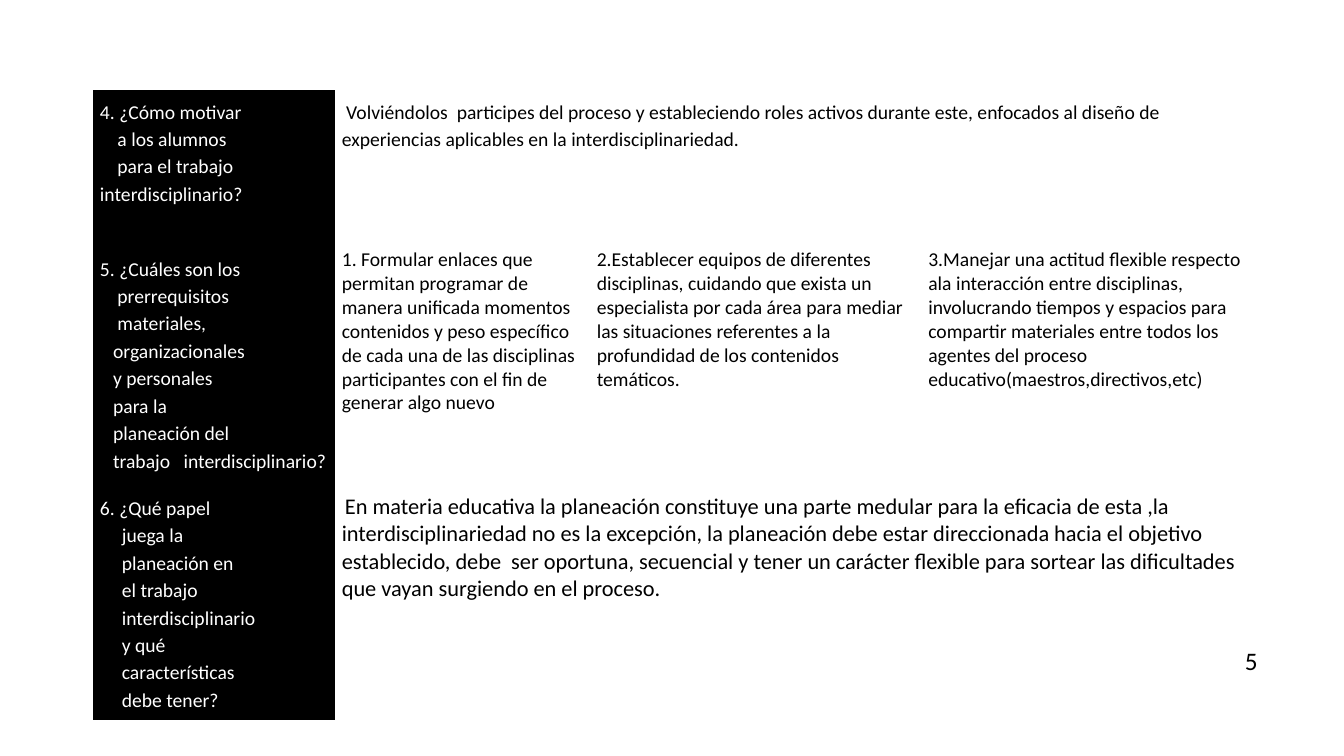
from pptx import Presentation
from pptx.dml.color import RGBColor
from pptx.enum.text import MSO_ANCHOR, MSO_AUTO_SIZE
from pptx.oxml.ns import qn
from pptx.util import Cm, Pt

MIDDLE = MSO_ANCHOR.MIDDLE
TOP = MSO_ANCHOR.TOP
FIT_SHAPE = MSO_AUTO_SIZE.SHAPE_TO_FIT_TEXT
BLACK = RGBColor(0x00, 0x00, 0x00)
WHITE = RGBColor(0xFF, 0xFF, 0xFF)
FONT = "Calibri"
PLAIN_TABLE_STYLE = "{2D5ABB26-0587-4C30-8999-92F81FD0307C}"
CELL_MARGIN = Cm(0.18)
SPACE_WIDTH = 0.11
COLUMN_SHARES = (2.4, 2.53, 3.29, 3.29)
ROW_HEIGHTS = (Cm(3.63), Cm(6.17), Cm(5.54))

QUESTIONS = [
    [(0, "4. ¿Cómo motivar"), (4, "a los alumnos"), (4, "para el trabajo"),
     (0, "interdisciplinario?")],
    [(0, "5. ¿Cuáles son los"), (4, "prerrequisitos"), (4, "materiales,"),
     (3, "organizacionales"), (3, "y personales"), (3, "para la"),
     (3, "planeación del"), (3, "trabajo   interdisciplinario?")],
    [(0, "6. ¿Qué papel"), (5, "juega la"), (5, "planeación en"),
     (5, "el trabajo"), (5, "interdisciplinario"), (5, "y qué"),
     (5, "características"), (5, "debe tener?")],
]
MOTIVATION = (
    "Volviéndolos  participes del proceso y estableciendo roles activos "
    "durante este, enfocados al diseño de experiencias aplicables en la "
    "interdisciplinariedad."
)
PREREQUISITES = [
    "1.\u00a0Formular enlaces que permitan programar de manera unificada momentos "
    "contenidos y peso específico de cada una de las disciplinas "
    "participantes con el fin de generar algo nuevo",
    "2.Establecer equipos de diferentes disciplinas, cuidando que exista un "
    "especialista por cada área para mediar las situaciones referentes a la "
    "profundidad de los contenidos temáticos.",
    "3.Manejar una actitud flexible respecto ala interacción entre "
    "disciplinas, involucrando tiempos y espacios para compartir materiales "
    "entre todos los agentes del proceso "
    "educativo(maestros,directivos,etc)",
]
PLANNING = (
    "En materia educativa la planeación constituye una parte medular para la "
    "eficacia de esta ,la interdisciplinariedad no es la excepción, la "
    "planeación debe estar direccionada hacia el objetivo establecido, debe  "
    "ser oportuna, secuencial y tener un carácter flexible para sortear las "
    "dificultades que vayan surgiendo en el proceso."
)


def write_paragraph(paragraph, text, size, color, spacing=None, left=0, first=0):
    paragraph.text = text
    paragraph.font.name = FONT
    paragraph.font.size = Pt(size)
    paragraph.font.color.rgb = color
    if spacing:
        paragraph.line_spacing = spacing
    properties = paragraph._p.get_or_add_pPr()
    properties.set("marL", str(Cm(left)))
    properties.set("indent", str(Cm(first)))


def prepare_cell(cell, anchor):
    cell.margin_left = cell.margin_right = CELL_MARGIN
    cell.margin_top = cell.margin_bottom = CELL_MARGIN
    cell.vertical_anchor = anchor


def fill_question(cell, lines):
    prepare_cell(cell, MIDDLE)
    cell.fill.solid()
    cell.fill.fore_color.rgb = BLACK
    frame = cell.text_frame
    for index, (spaces, text) in enumerate(lines):
        paragraph = frame.add_paragraph() if index else frame.paragraphs[0]
        write_paragraph(paragraph, text, 14, WHITE, 1.15, spaces * SPACE_WIDTH)


def fill_answer(cell, text, size=14, spacing=None, first=0):
    prepare_cell(cell, TOP)
    cell.fill.background()
    write_paragraph(cell.text_frame.paragraphs[0], text, size, BLACK, spacing,
                    first=first)


def add_question_table(slide, left, top, width):
    table = slide.shapes.add_table(len(ROW_HEIGHTS), len(COLUMN_SHARES), left, top,
                                   width, sum(ROW_HEIGHTS)).table
    table.first_row = False
    table.horz_banding = False
    table._tbl.tblPr.find(qn("a:tableStyleId")).text = PLAIN_TABLE_STYLE
    for column, share in zip(table.columns, COLUMN_SHARES):
        column.width = int(width * share / sum(COLUMN_SHARES))
    for row, height in zip(table.rows, ROW_HEIGHTS):
        row.height = height
    for row, lines in enumerate(QUESTIONS):
        fill_question(table.cell(row, 0), lines)
    table.cell(0, 0).margin_bottom = Cm(0.87)

    for row in (0, 2):
        table.cell(row, 1).merge(table.cell(row, 3))
    fill_answer(table.cell(0, 1), MOTIVATION, spacing=1.15, first=SPACE_WIDTH)
    for column, text in enumerate(PREREQUISITES, start=1):
        fill_answer(table.cell(1, column), text)
    fill_answer(table.cell(2, 1), PLANNING, size=16, first=0.08)


def add_page_number(slide, left, top, width, height):
    frame = slide.shapes.add_textbox(left, top, width, height).text_frame
    frame.word_wrap = False
    frame.auto_size = FIT_SHAPE
    write_paragraph(frame.paragraphs[0], "5", 18, BLACK)


def main():
    presentation = Presentation()
    presentation.slide_width = Cm(33.87)
    presentation.slide_height = Cm(19.05)
    slide = presentation.slides.add_slide(presentation.slide_layouts[6])
    add_question_table(slide, Cm(2.34), Cm(2.26), Cm(29.23))
    add_page_number(slide, Cm(31.12), Cm(16.13), Cm(0.84), Cm(1.02))
    presentation.save("out.pptx")


if __name__ == "__main__":
    main()
